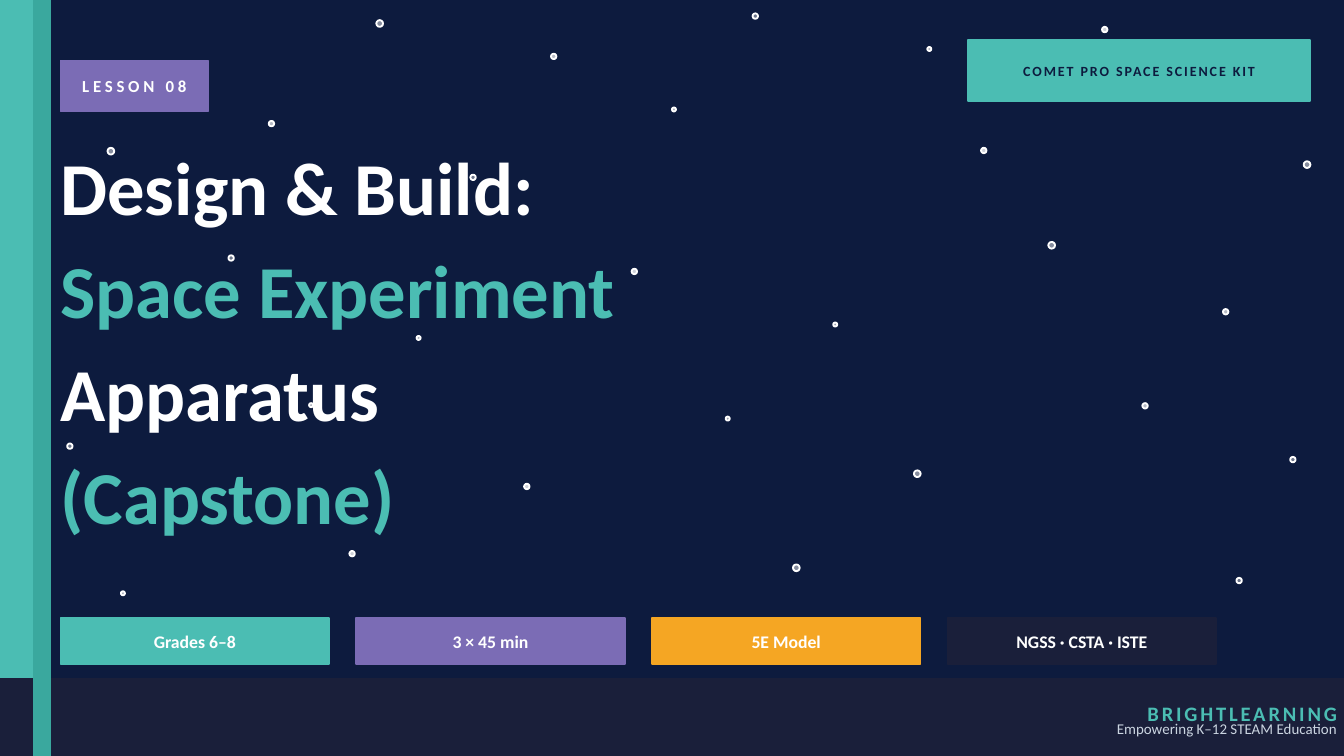
"""Build the title slide of lesson 08, a space experiment capstone."""
from lxml import etree
from pptx import Presentation
from pptx import util as u
from pptx.dml.color import RGBColor
from pptx.enum import shapes, text
from pptx.oxml.ns import qn

COLORS = {
    "night": "0D1B3E", "ink": "1A1F3A", "teal": "4BBDB3", "deep_teal": "3AA89E",
    "purple": "7B6CB5", "orange": "F5A623", "white": "FFFFFF", "mist": "CBD5E1",
}
CENTER, RIGHT = text.PP_ALIGN.CENTER, text.PP_ALIGN.RIGHT
SLIDE_WIDTH = 10
SLIDE_HEIGHT = SLIDE_WIDTH * 9 / 16


def add_block(place, color, preset=shapes.MSO_SHAPE.RECTANGLE):
    shape = slide.shapes.add_shape(preset, *map(u.Inches, place))
    shape.shadow.inherit = False
    shape.fill.solid()
    shape.fill.fore_color.rgb = RGBColor.from_string(COLORS[color])
    shape.line.color.rgb = RGBColor.from_string(COLORS[color])
    shape.line.width = u.Pt(1)
    return shape


def write_text(shape, lines, size, align, bold=True, spacing=0, anchor=text.MSO_ANCHOR.MIDDLE):
    frame = shape.text_frame
    frame.word_wrap = True
    frame.auto_size = text.MSO_AUTO_SIZE.NONE
    frame.vertical_anchor = anchor
    frame.margin_left = frame.margin_right = frame.margin_top = frame.margin_bottom = 0
    frame.text = "\n".join(words for words, color in lines)
    for paragraph, (words, color) in zip(frame.paragraphs, lines):
        paragraph.alignment = align
        paragraph.font.name = "Calibri"
        paragraph.font.size = u.Pt(size)
        paragraph.font.bold = bold
        paragraph.font.color.rgb = RGBColor.from_string(COLORS[color])
        if spacing:
            paragraph.runs[0]._r.get_or_add_rPr().set("spc", str(int(spacing * 100)))


presentation = Presentation()
presentation.slide_width = u.Inches(SLIDE_WIDTH)
presentation.slide_height = u.Inches(SLIDE_HEIGHT)
slide = presentation.slides.add_slide(presentation.slide_layouts[5])
slide.background.fill.solid()
slide.background.fill.fore_color.rgb = RGBColor.from_string(COLORS["night"])

stars = [
    (2.8, 0.15, 50), (4.1, 0.4, 70), (5.6, 0.1, 40), (6.9, 0.35, 65), (8.2, 0.2, 80),
    (0.8, 1.1, 50), (2, 0.9, 70), (3.5, 1.3, 40), (5, 0.8, 65), (7.3, 1.1, 80),
    (9.7, 1.2, 50), (1.7, 1.9, 40), (3.1, 2.5, 65), (4.7, 2, 80), (6.2, 2.4, 60),
    (7.8, 1.8, 50), (9.1, 2.3, 70), (0.5, 3.3, 40), (2.3, 3, 65), (3.9, 3.6, 80),
    (5.4, 3.1, 60), (6.8, 3.5, 50), (8.5, 3, 70), (9.6, 3.4, 40), (0.9, 4.4, 65),
    (2.6, 4.1, 80), (5.9, 4.2, 50), (7.4, 4.6, 70), (9.2, 4.3, 40),
]
star_sizes = {50: 0.05, 60: 0.03, 65: 0.03}
for left, top, opacity in stars:
    diameter = star_sizes.get(opacity, 0.04)
    star = add_block((left, top, diameter, diameter), "white", shapes.MSO_SHAPE.OVAL)
    fill_color = star._element.spPr.find(qn("a:solidFill"))[0]
    etree.SubElement(fill_color, qn("a:alpha")).set("val", str(opacity * 1000))

add_block((0, 0, 0.25, SLIDE_HEIGHT), "teal")
add_block((0, 5.05, SLIDE_WIDTH, SLIDE_HEIGHT - 5.05), "ink")
add_block((0.25, 0, 0.12, SLIDE_HEIGHT), "deep_teal")

kit_badge = add_block((7.2, 0.3, 2.55, 0.45), "teal")
write_text(kit_badge, [("COMET PRO SPACE SCIENCE KIT", "night")], 7.5, CENTER, spacing=1)
lesson_badge = add_block((0.45, 0.45, 1.1, 0.38), "purple")
write_text(lesson_badge, [("LESSON 08", "white")], 9, CENTER, spacing=2)

title = slide.shapes.title
title.left, title.top, title.width, title.height = map(u.Inches, (0.45, 0.95, 6.3, 3.6))
title_lines = [
    ("Design & Build:", "white"), ("Space Experiment", "teal"),
    ("Apparatus", "white"), ("(Capstone)", "teal"),
]
write_text(title, title_lines, 40, text.PP_ALIGN.LEFT, anchor=text.MSO_ANCHOR.TOP)
for paragraph in title.text_frame.paragraphs:
    paragraph.line_spacing = 1.15
title.element.getparent().append(title.element)

facts = [
    ("Grades 6–8", "teal"), ("3 × 45 min", "purple"),
    ("5E Model", "orange"), ("NGSS · CSTA · ISTE", "ink"),
]
for index, (words, color) in enumerate(facts):
    fact_tag = add_block((0.45 + 2.2 * index, 4.6, 2, 0.34), color)
    write_text(fact_tag, [(words, "white")], 9.5, CENTER)

publisher = slide.shapes.add_textbox(*map(u.Inches, (7.5, 5.1, 2.45, 0.42)))
write_text(publisher, [("BRIGHTLEARNING", "teal")], 11, RIGHT, spacing=1.5)
tagline = slide.shapes.add_textbox(*map(u.Inches, (5.5, 5.28, 4.45, 0.28)))
write_text(tagline, [("Empowering K–12 STEAM Education", "mist")], 8, RIGHT, bold=False)

presentation.save("out.pptx")
